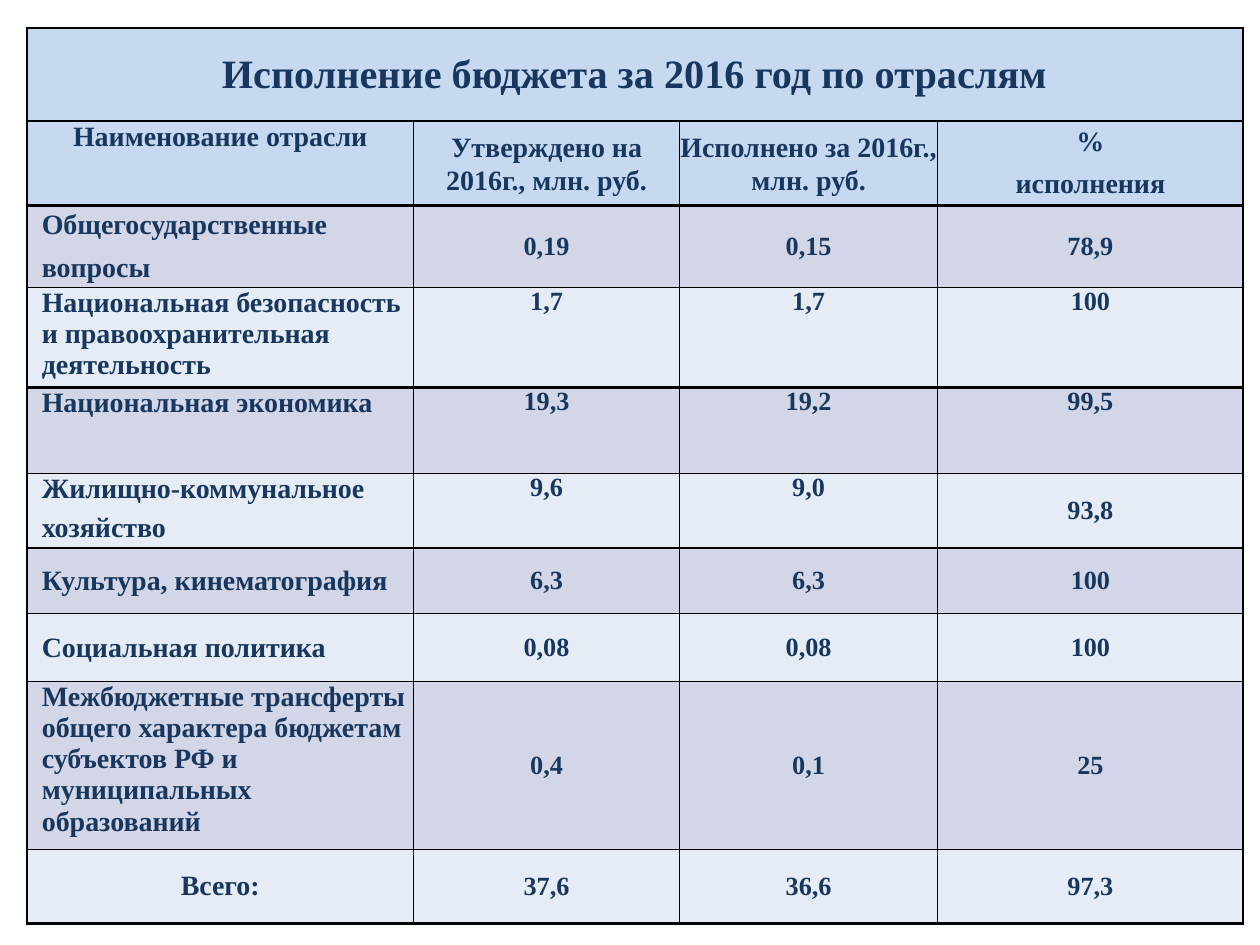
from lxml import etree
from pptx import Presentation
from pptx import util as u
from pptx.dml import color
from pptx.enum import text
from pptx.oxml import ns

Pt = u.Pt
CENTER, LEFT = text.PP_ALIGN.CENTER, text.PP_ALIGN.LEFT
TOP, MIDDLE = text.MSO_ANCHOR.TOP, text.MSO_ANCHOR.MIDDLE
THICK, THIN = 1.5, 0.75
INK, HEAD, ODD, EVEN = "17375E", "C6D9F1", "D2D6E7", "E6ECF6"

TITLE = "Исполнение бюджета за 2016 год по отраслям"
HEADINGS = [
    ("Наименование отрасли", dict(anchor=TOP)),
    ("Утверждено на 2016г., млн. руб.", dict(line=19.2)),
    ("Исполнено за 2016г., млн. руб.", dict(line=19.2)),
    ("%\nисполнения", dict(after=6.3)),
]
SECTORS = [
    ("Общегосударственные\nвопросы", "0,19", "0,15", "78,9"),
    ("Национальная безопасность и правоохранительная деятельность", "1,7", "1,7", "100"),
    ("Национальная экономика", "19,3", "19,2", "99,5"),
    ("Жилищно-коммунальное\nхозяйство", "9,6", "9,0", "93,8"),
    ("Культура, кинематография", "6,3", "6,3", "100"),
    ("Социальная политика", "0,08", "0,08", "100"),
    ("Межбюджетные трансферты общего характера бюджетам субъектов РФ и "
     "муниципальных образований", "0,4", "0,1", "25"),
    ("Всего:", "37,6", "36,6", "97,3"),
]
TOP_CELLS = {(3, 0), (3, 1), (3, 2), (3, 3), (4, 0), (4, 1), (4, 2), (4, 3),
             (5, 0), (5, 1), (5, 2), (8, 0)}
COLUMN_WIDTHS = [221, 151.9, 147.6, 174.5]
ROW_HEIGHTS = [53.3, 48.2, 46.8, 57.2, 49.2, 42.6, 37.4, 38.9, 96, 42.2]
THICK_RULES = {0, 1, 2, 4, 6, len(ROW_HEIGHTS)}


def rgb(value):
    return color.RGBColor.from_string(value)


def write(cell, words, size=16, align=CENTER, anchor=MIDDLE, indent=0, after=0, line=None):
    cell.margin_left = cell.margin_right = cell.margin_top = cell.margin_bottom = 0
    cell.vertical_anchor = anchor
    lines = words.split("\n")
    for number, words_in_line in enumerate(lines):
        frame = cell.text_frame
        paragraph = frame.paragraphs[0] if number == 0 else frame.add_paragraph()
        paragraph.alignment = align
        paragraph.space_after = Pt(after if number < len(lines) - 1 else 0)
        if line:
            paragraph.line_spacing = Pt(line)
        if indent:
            properties = paragraph._p.get_or_add_pPr()
            properties.set("marL", str(Pt(indent)))
            properties.set("indent", "0")
        run = paragraph.add_run()
        run.text = words_in_line
        run.font.name = "Times New Roman"
        run.font.size = Pt(size)
        run.font.bold = True
        run.font.color.rgb = rgb(INK)


def draw_borders(cell, widths):
    properties = cell._tc.get_or_add_tcPr()
    for position, (side, width) in enumerate(zip("LRTB", widths)):
        border = etree.Element(ns.qn("a:ln" + side), w=str(Pt(width)))
        fill = etree.SubElement(border, ns.qn("a:solidFill"))
        etree.SubElement(fill, ns.qn("a:srgbClr"), val="000000")
        properties.insert(position, border)


def style_grid(table):
    last_column = len(COLUMN_WIDTHS) - 1
    for row in range(len(ROW_HEIGHTS)):
        for column in range(len(COLUMN_WIDTHS)):
            cell = table.cell(row, column)
            cell.fill.solid()
            cell.fill.fore_color.rgb = rgb(HEAD if row < 2 else (ODD, EVEN)[row % 2])
            draw_borders(cell, [
                THICK if column == 0 else THIN,
                THICK if column == last_column or row == 0 else THIN,
                THICK if row in THICK_RULES else THIN,
                THICK if row + 1 in THICK_RULES else THIN,
            ])


def add_budget_table(slide, left, top, width, height):
    table = slide.shapes.add_table(len(ROW_HEIGHTS), len(COLUMN_WIDTHS),
                                   Pt(left), Pt(top), Pt(width), Pt(height)).table
    table.first_row = table.horz_banding = False
    for column, share in zip(table.columns, COLUMN_WIDTHS):
        column.width = Pt(width * share / sum(COLUMN_WIDTHS))
    for row, share in zip(table.rows, ROW_HEIGHTS):
        row.height = Pt(height * share / sum(ROW_HEIGHTS))

    style_grid(table)
    table.cell(0, 0).merge(table.cell(0, len(COLUMN_WIDTHS) - 1))
    write(table.cell(0, 0), TITLE, size=23)
    for column, (heading, layout) in enumerate(HEADINGS):
        write(table.cell(1, column), heading, **layout)
    for row, (sector, *amounts) in enumerate(SECTORS, start=2):
        total = sector == SECTORS[-1][0]
        write(table.cell(row, 0), sector,
              align=CENTER if total else LEFT,
              indent=0 if total else 8.5,
              after=4.2 if row == 5 else 6.3,
              anchor=TOP if (row, 0) in TOP_CELLS else MIDDLE)
        for column, amount in enumerate(amounts, start=1):
            write(table.cell(row, column), amount, size=15,
                  anchor=TOP if (row, column) in TOP_CELLS else MIDDLE)


def main():
    deck = Presentation()
    deck.slide_width, deck.slide_height = Pt(720), Pt(540)
    slide = deck.slides.add_slide(deck.slide_layouts[6])
    add_budget_table(slide, 15.4, 16, 695, 511.8)
    deck.save("out.pptx")


if __name__ == "__main__":
    main()
